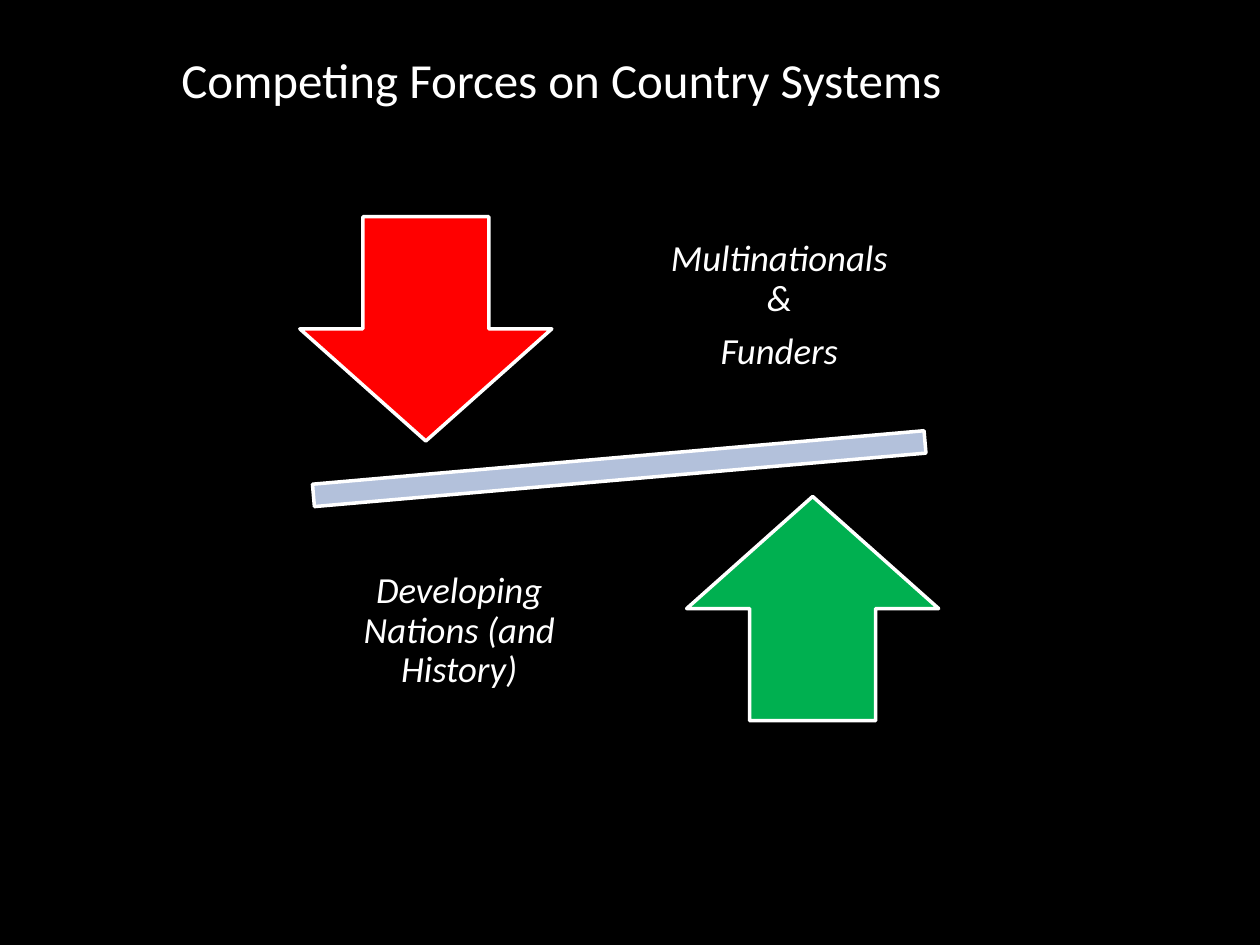
from dataclasses import dataclass

from pptx import Presentation
from pptx.dml.color import RGBColor
from pptx.enum.shapes import MSO_SHAPE
from pptx.enum.text import MSO_ANCHOR, PP_ALIGN
from pptx.util import Inches, Pt


@dataclass(frozen=True)
class Theme:
    font: str = "Calibri"
    background: str = "000000"
    text: str = "FFFFFF"
    outline: str = "FFFFFF"
    beam: str = "B3C1DB"
    down: str = "FF0000"
    up: str = "00B050"
    title_size: int = 28
    label_size: int = 21
    outline_width: int = 2


THEME = Theme()


def color(value):
    return RGBColor.from_string(value)


def add_text(slide, box, text, size, italic=False, line_spacing=None, space_after=0, inset=None):
    shape = slide.shapes.add_textbox(*map(Inches, box))
    frame = shape.text_frame
    frame.word_wrap = True
    frame.vertical_anchor = MSO_ANCHOR.MIDDLE
    if inset is not None:
        frame.margin_left = frame.margin_right = Inches(inset)
        frame.margin_top = frame.margin_bottom = Inches(inset)
    frame.text = text
    for paragraph in frame.paragraphs:
        paragraph.alignment = PP_ALIGN.CENTER
        paragraph.line_spacing = line_spacing
        paragraph.space_after = Pt(space_after)
        paragraph.font.name = THEME.font
        paragraph.font.size = Pt(size)
        paragraph.font.italic = italic
        paragraph.font.color.rgb = color(THEME.text)


def add_outlined_shape(slide, kind, box, fill, rotation=0):
    shape = slide.shapes.add_shape(kind, *map(Inches, box))
    shape.shadow.inherit = False
    shape.fill.solid()
    shape.fill.fore_color.rgb = color(fill)
    shape.line.color.rgb = color(THEME.outline)
    shape.line.width = Pt(THEME.outline_width)
    shape.rotation = rotation


def add_balance(slide, box):
    left, top, width, height = box
    center_x, center_y = left + width / 2, top + height / 2

    def centered(offset_x, offset_y, part_width, part_height):
        return (center_x + offset_x - part_width / 2, center_y + offset_y - part_height / 2,
                part_width, part_height)

    add_outlined_shape(slide, MSO_SHAPE.MATH_MINUS, centered(0, 0, width, 0.76), THEME.beam, rotation=355)
    sides = (
        (-1, MSO_SHAPE.DOWN_ARROW, THEME.down, "Multinationals &\nFunders"),
        (1, MSO_SHAPE.UP_ARROW, THEME.up, "Developing Nations (and History)"),
    )
    for side, arrow, fill, label in sides:
        add_outlined_shape(slide, arrow, centered(side * 1.535, side * 1.11, 2, 1.78), fill)
        add_text(slide, centered(-side * 1.27, side * 1.29, 2.13, 1.87), label, THEME.label_size,
                 italic=True, line_spacing=0.9, space_after=7.35, inset=0.16)


def main():
    presentation = Presentation()
    presentation.slide_width, presentation.slide_height = Inches(10), Inches(7.5)
    slide = presentation.slides.add_slide(presentation.slide_layouts[6])
    slide.background.fill.solid()
    slide.background.fill.fore_color.rgb = color(THEME.background)
    add_text(slide, (0.25, 0, 8.5, 1.25), "Competing Forces on Country Systems ", THEME.title_size)
    add_balance(slide, (1.6, 1.5, 6.63, 4.44))
    presentation.save("out.pptx")


if __name__ == "__main__":
    main()
